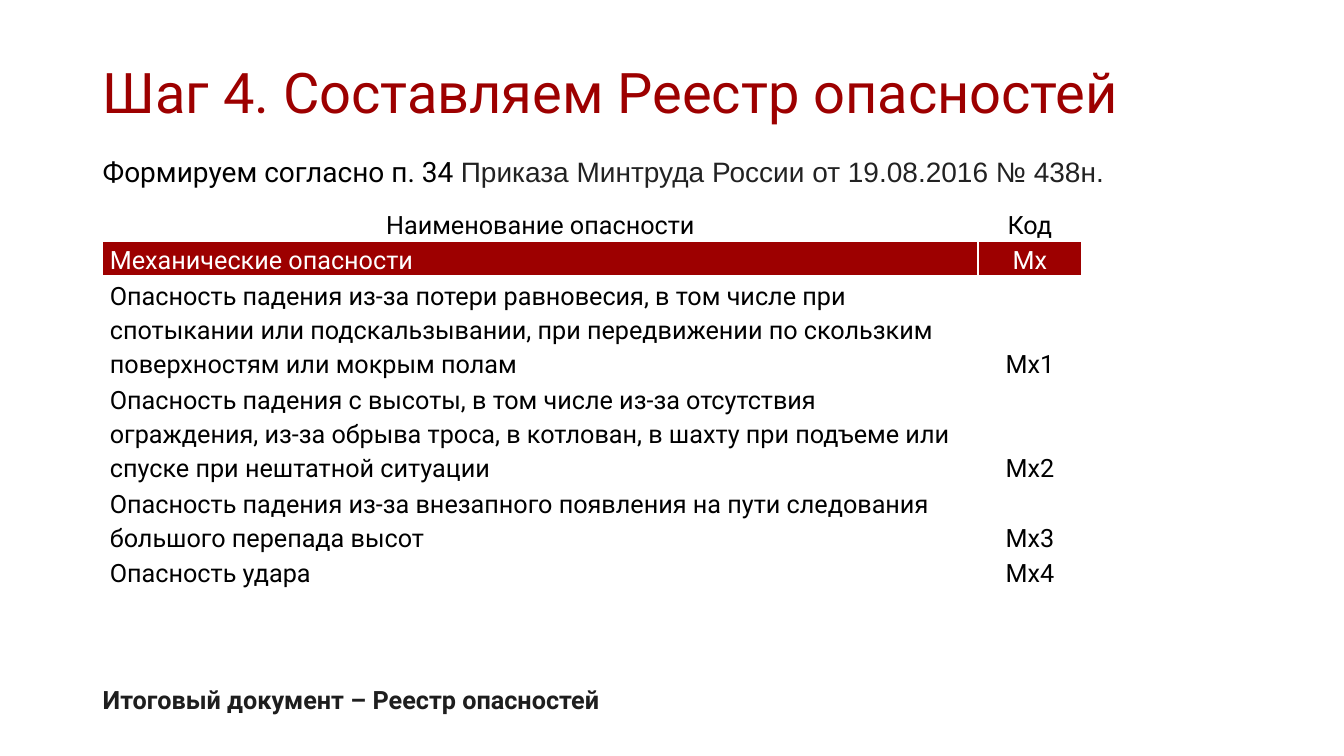
"""Build the slide on compiling the hazard register."""
from lxml.etree import SubElement
from pptx import Presentation
from pptx.dml.color import RGBColor
from pptx.enum.text import MSO_ANCHOR as ANCHOR, PP_ALIGN as ALIGN
from pptx.oxml.ns import qn
from pptx.util import Inches, Pt

COLORS = {
    "red": "9D0000",
    "black": "000000",
    "white": "FFFFFF",
    "link": "222222",
    "dark": "1E1E1E",
}
HAZARDS = [
    ("Наименование опасности", "Код", 1),
    ("Механические опасности", "Мх", 1),
    ("Опасность падения из-за потери равновесия, в том числе при спотыкании "
     "или подскальзывании, при передвижении по скользким поверхностям или "
     "мокрым полам", "Мх1", 3),
    ("Опасность падения с высоты, в том числе из-за отсутствия ограждения, "
     "из-за обрыва троса, в котлован, в шахту при подъеме или спуске при "
     "нештатной ситуации", "Мх2", 3),
    ("Опасность падения из-за внезапного появления на пути следования "
     "большого перепада высот", "Мх3", 2),
    ("Опасность удара", "Мх4", 1),
]
COLUMN_WIDTHS = (8.68, 1.03)
LINE_HEIGHT = 0.33


def rgb(name):
    return RGBColor.from_string(COLORS[name])


def style_font(font, size, color, name="Roboto", bold=False):
    font.size = Pt(size)
    font.name = name
    font.bold = bold
    font.color.rgb = rgb(color)


def add_text(s, top, height, runs, size, bold=False, anchor=ANCHOR.TOP):
    box = s.shapes.add_textbox(Inches(0.92), Inches(top), Inches(11.5), Inches(height))
    tf = box.text_frame
    tf.word_wrap = True
    tf.vertical_anchor = anchor
    p = tf.paragraphs[0]
    p.line_spacing = 0.9
    for text, color, font_name in runs:
        r = p.add_run()
        r.text = text
        style_font(r.font, size, color, font_name, bold)


def set_borders(cell, bottom_width):
    tc_pr = cell._tc.get_or_add_tcPr()
    widths = {"a:lnL": 1, "a:lnR": 1, "a:lnT": 1, "a:lnB": bottom_width}
    for tag, width in widths.items():
        line = SubElement(tc_pr, qn(tag), w=str(Pt(width)))
        fill = SubElement(line, qn("a:solidFill"))
        SubElement(fill, qn("a:srgbClr"), val=COLORS["white"])


def fill_cell(cell, text, row, centered):
    set_borders(cell, 3 if row == 0 else 1)
    if row == 0:
        cell.fill.background()
    else:
        cell.fill.solid()
        cell.fill.fore_color.rgb = rgb("red" if row == 1 else "white")
    cell.vertical_anchor = ANCHOR.BOTTOM
    cell.margin_left = cell.margin_right = Inches(0.07)
    cell.margin_top = cell.margin_bottom = 0
    p = cell.text_frame.paragraphs[0]
    p.text = text
    p.line_spacing = 1.15
    p.alignment = ALIGN.CENTER if centered else ALIGN.LEFT
    style_font(p.runs[0].font, 18, "white" if row == 1 else "black")


def add_hazard_table(s):
    height = LINE_HEIGHT * sum(lines for _, _, lines in HAZARDS)
    table = s.shapes.add_table(
        len(HAZARDS), len(COLUMN_WIDTHS), Inches(1.02), Inches(2.04),
        Inches(sum(COLUMN_WIDTHS)), Inches(height)).table
    table.first_row = table.horz_banding = False
    for column, width in zip(table.columns, COLUMN_WIDTHS):
        column.width = Inches(width)
    for row, (hazard, code, lines) in enumerate(HAZARDS):
        table.rows[row].height = Inches(LINE_HEIGHT * lines)
        fill_cell(table.cell(row, 0), hazard, row, centered=row == 0)
        fill_cell(table.cell(row, 1), code, row, centered=True)


def main():
    prs = Presentation()
    prs.slide_width, prs.slide_height = Inches(13.33), Inches(7.5)
    s = prs.slides.add_slide(prs.slide_layouts[6])
    add_text(s, 0.34, 0.96, [("Шаг 4. Составляем Реестр опасностей", "red", "Roboto")],
             40, anchor=ANCHOR.BOTTOM)
    add_text(s, 1.52, 0.4, [
        ("Формируем согласно п. 34 ", "black", "Roboto"),
        ("Приказа Минтруда России от 19.08.2016 № 438н.", "link", "Arial"),
    ], 20)
    add_hazard_table(s)
    add_text(s, 6.77, 0.37, [("Итоговый документ – Реестр опасностей", "dark", "Roboto")],
             18, bold=True)
    prs.save("out.pptx")


if __name__ == "__main__":
    main()
